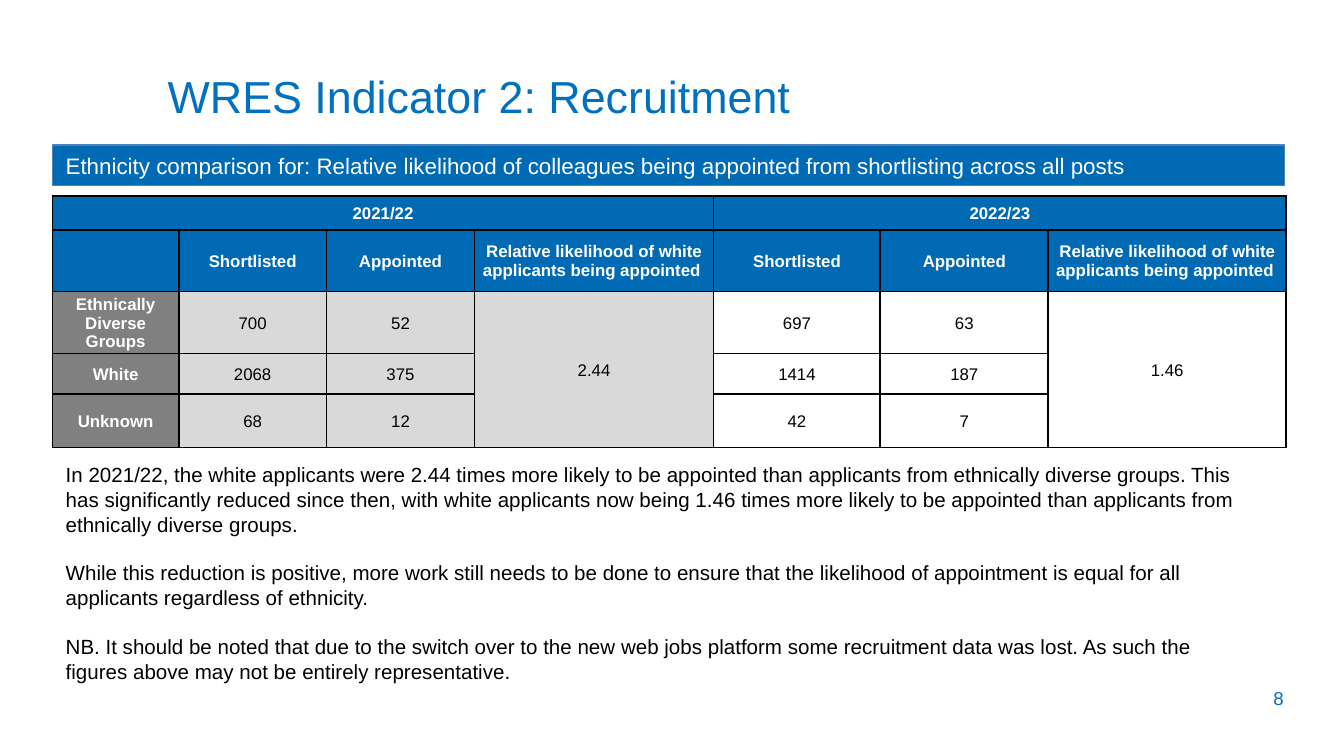
"""Build the WRES Indicator 2 recruitment slide."""
from dataclasses import dataclass

from lxml import etree
from pptx import Presentation
from pptx.dml.color import RGBColor as Rgb
from pptx.enum.shapes import MSO_SHAPE as Shape
from pptx.enum.text import MSO_ANCHOR as Anchor, PP_ALIGN as Align
from pptx.oxml.ns import qn
from pptx.util import Inches, Pt


@dataclass(frozen=True)
class Theme:
    font: str = "Arial"
    accent: str = "0070C0"
    header: str = "006AB4"
    outline: str = "4F81BD"
    label: str = "808080"
    previous: str = "D9D9D9"
    white: str = "FFFFFF"
    black: str = "000000"
    title_size: int = 24
    banner_size: int = 12
    body_size: int = 11
    number_size: int = 10
    table_size: int = 9


def write(frame, text, size, color, align=Align.LEFT, bold=False):
    frame.text = text
    frame.word_wrap = True
    for para in frame.paragraphs:
        para.alignment = align
        for span in para.runs:
            span.font.name = theme.font
            span.font.size = Pt(size)
            span.font.bold = bold
            span.font.color.rgb = Rgb.from_string(color)


def add_border(cell):
    for side in ("lnL", "lnR", "lnT", "lnB"):
        line = etree.Element(qn(f"a:{side}"), w=str(Pt(1)))
        fill = etree.SubElement(line, qn("a:solidFill"))
        etree.SubElement(fill, qn("a:srgbClr"), val=theme.black)
        properties = cell._tc.get_or_add_tcPr()
        properties.insert(len(properties) - 1, line)


theme = Theme()
deck = Presentation()
deck.slide_width = Inches(10)
deck.slide_height = deck.slide_width * 9 // 16
page = deck.slides.add_slide(deck.slide_layouts[6])
left, width = Inches(0.39), Inches(9.17)

number = page.shapes.add_textbox(Inches(9.28), Inches(5.06), Inches(0.37), Inches(0.27))
write(number.text_frame, "8", theme.number_size, theme.accent, Align.RIGHT)

title = page.shapes.add_textbox(Inches(1.15), Inches(0.46), Inches(8.4), Inches(0.58))
write(title.text_frame, "WRES Indicator 2: Recruitment", theme.title_size, theme.accent)

banner = page.shapes.add_shape(Shape.RECTANGLE, left, Inches(1.08), width, Inches(0.3))
banner.shadow.inherit = False
banner.fill.solid()
banner.fill.fore_color.rgb = Rgb.from_string(theme.header)
banner.line.color.rgb = Rgb.from_string(theme.outline)
banner.line.width = Pt(0.75)
write(
    banner.text_frame,
    "Ethnicity comparison for: Relative likelihood of colleagues being appointed "
    "from shortlisting across all posts",
    theme.banner_size,
    theme.white,
)

measures = ["Shortlisted", "Appointed", "Relative likelihood of white applicants being appointed "]
rows = [
    ["2021/22", "", "", "", "2022/23", "", ""],
    ["", *measures, *measures],
    ["Ethnically Diverse Groups", "700", "52", "2.44", "697", "63", "1.46"],
    ["White", "2068", "375", "", "1414", "187", ""],
    ["Unknown", "68", "12", "", "42", "7", ""],
]
column_widths = [0.94, 1.1, 1.1, 1.78, 1.24, 1.25, 1.77]
row_heights = [0.25, 0.46, 0.46, 0.3, 0.4]
table = page.shapes.add_table(
    len(rows), len(column_widths), left, Inches(1.46), width, Inches(sum(row_heights))
).table
for column, column_width in zip(table.columns, column_widths):
    column.width = Inches(column_width)
for row, row_height in zip(table.rows, row_heights):
    row.height = Inches(row_height)

for top, first, bottom, last in [(0, 0, 0, 3), (0, 4, 0, 6), (2, 3, 4, 3), (2, 6, 4, 6)]:
    table.cell(top, first).merge(table.cell(bottom, last))

for row_index, row in enumerate(rows):
    for column_index, text in enumerate(row):
        cell = table.cell(row_index, column_index)
        heading = row_index < 2 or column_index == 0
        if row_index < 2:
            fill = theme.header
        elif column_index == 0:
            fill = theme.label
        else:
            fill = theme.previous if column_index < 4 else theme.white
        cell.fill.solid()
        cell.fill.fore_color.rgb = Rgb.from_string(fill)
        cell.vertical_anchor = Anchor.MIDDLE
        cell.margin_left = cell.margin_right = cell.margin_top = Inches(0.01)
        cell.margin_bottom = 0
        add_border(cell)
        if not cell.is_spanned:
            color = theme.white if heading else theme.black
            write(cell.text_frame, text, theme.table_size, color, Align.CENTER, heading)

comments = [
    "In 2021/22, the white applicants were 2.44 times more likely to be appointed than "
    "applicants from ethnically diverse groups. This has significantly reduced since then, "
    "with white applicants now being 1.46 times more likely to be appointed than applicants "
    "from ethnically diverse groups.",
    "While this reduction is positive, more work still needs to be done to ensure that the "
    "likelihood of appointment is equal for all applicants regardless of ethnicity.",
    "NB. It should be noted that due to the switch over to the new web jobs platform some "
    "recruitment data was lost. As such the figures above may not be entirely representative.",
]
body = page.shapes.add_textbox(left, Inches(3.39), Inches(9.05), Inches(1.77))
write(body.text_frame, "\n".join(comments), theme.body_size, theme.black)
for para in body.text_frame.paragraphs[1:]:
    para.space_before = Pt(13)

deck.save("out.pptx")
